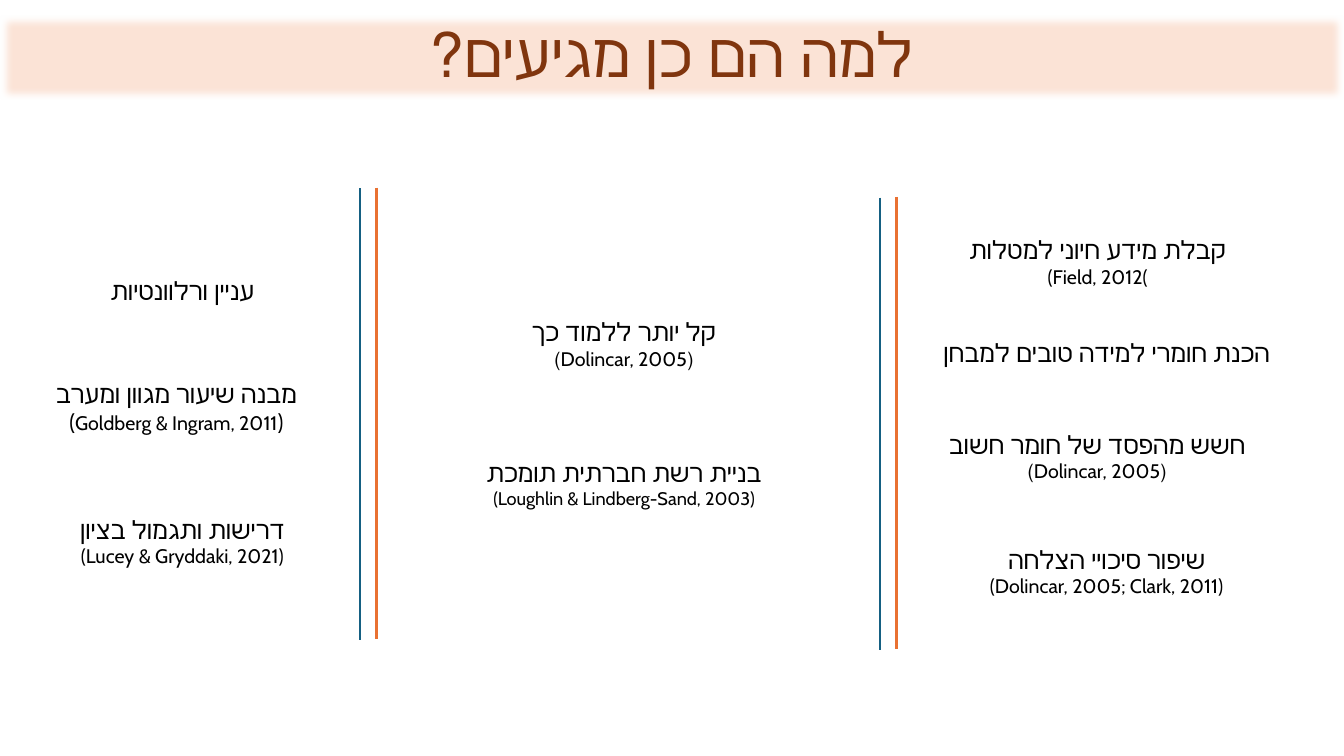
from lxml.etree import SubElement
from pptx import Presentation
from pptx.dml.color import RGBColor
from pptx.enum.shapes import MSO_CONNECTOR, MSO_SHAPE
from pptx.enum.text import MSO_ANCHOR, PP_ALIGN
from pptx.oxml.ns import qn
from pptx.util import Pt

PEACH = RGBColor(0xFB, 0xE3, 0xD6)
BROWN = RGBColor(0x80, 0x35, 0x0E)
BLACK = RGBColor(0x00, 0x00, 0x00)
ORANGE = RGBColor(0xE9, 0x71, 0x32)
BLUE = RGBColor(0x15, 0x60, 0x82)

REASON_HEIGHT = 113
DIVIDER_HEIGHT = 322.8


def add_paragraph(frame, spans, first, rtl=False, font="Cabin", color=BLACK):
    """Add centred (text, size) spans; a text of one newline is a line break."""
    para = frame.paragraphs[0] if first else frame.add_paragraph()
    para.alignment = PP_ALIGN.CENTER
    if rtl:
        para._p.get_or_add_pPr().set("rtl", "1")
    for text, size in spans:
        if text == "\n":
            para.add_line_break()
            continue
        span = para.add_run()
        span.text = text
        span.font.size = Pt(size)
        span.font.name = font
        span.font.color.rgb = color
    return para


deck = Presentation()
deck.slide_width, deck.slide_height = Pt(960), Pt(540)
page = deck.slides.add_slide(deck.slide_layouts[5])

title = page.shapes.title
title.left, title.top, title.width, title.height = Pt(0), Pt(10.8), Pt(960), Pt(60.5)
title.fill.solid()
title.fill.fore_color.rgb = PEACH
title.text_frame.word_wrap = True
title.text_frame.vertical_anchor = MSO_ANCHOR.MIDDLE
heading = add_paragraph(title.text_frame, [("למה הם כן מגיעים?", 44)], True,
                        rtl=True, font="Calibri", color=BROWN)
heading.line_spacing = 0.9
effects = SubElement(title._element.spPr, qn("a:effectLst"))
SubElement(effects, qn("a:softEdge"), rad=str(Pt(5)))

# Left, top, width, right-to-left, paragraphs of (text, size) spans
reasons = [
    (-21.6, 151.2, 303.8, False, [[("עניין ורלוונטיות", 18)]]),
    (617, 269.3, 333.4, True,
     [[("חשש מהפסד של חומר חשוב ", 18), ("(Dolincar, 2005)", 14)]]),
    (632.2, 130.3, 303.8, False,
     [[("קבלת מידע חיוני למטלות", 18), ("\n", 18), ("(Field, 2012(", 14)]]),
    (268.6, 188.6, 354.2, True,
     [[("קל יותר ללמוד כך", 18), ("\n", 18), ("(Dolincar, 2005)", 14)]]),
    (638.6, 351.4, 303.8, False,
     [[("שיפור סיכויי הצלחה", 18), ("\n", 18), ("(Dolincar, 2005; Clark, 2011)", 14)]]),
    (293.8, 288.7, 303.8, False,
     [[("בניית רשת חברתית תומכת", 18)], [("(Loughlin & Lindberg-Sand, 2003)", 13)]]),
    (613.4, 195.1, 354.2, False, [[("הכנת חומרי למידה טובים למבחן ", 18)]]),
    (-21.6, 329.8, 303.8, False,
     [[("דרישות ותגמול בציון", 18)], [("(Lucey & Gryddaki, 2021)", 14)]]),
    (-25.9, 234, 303.8, False,
     [[("מבנה שיעור מגוון ומערב", 18)],
      [("(", 16), ("Goldberg & Ingram, 2011", 14), (")", 16)]]),
]
for left, top, width, rtl, paragraphs in reasons:
    reason = page.shapes.add_shape(MSO_SHAPE.OVAL, Pt(left), Pt(top), Pt(width), Pt(REASON_HEIGHT))
    reason.shadow.inherit = False
    reason.fill.background()
    reason.line.fill.background()
    reason.text_frame.word_wrap = True
    reason.text_frame.vertical_anchor = MSO_ANCHOR.MIDDLE
    for index, spans in enumerate(paragraphs):
        add_paragraph(reason.text_frame, spans, index == 0, rtl=rtl)

for pair_left, pair_top in [(257.2, 134), (628.4, 140.6)]:
    for shift, drop, color, weight in [(11.9, 0, ORANGE, 2), (0, 0.6, BLUE, 1.5)]:
        x, y = pair_left + shift, pair_top + drop
        divider = page.shapes.add_connector(
            MSO_CONNECTOR.STRAIGHT, Pt(x), Pt(y), Pt(x), Pt(y + DIVIDER_HEIGHT))
        divider.line.color.rgb = color
        divider.line.width = Pt(weight)
        SubElement(divider._element.spPr, qn("a:effectLst"))

deck.save("out.pptx")
